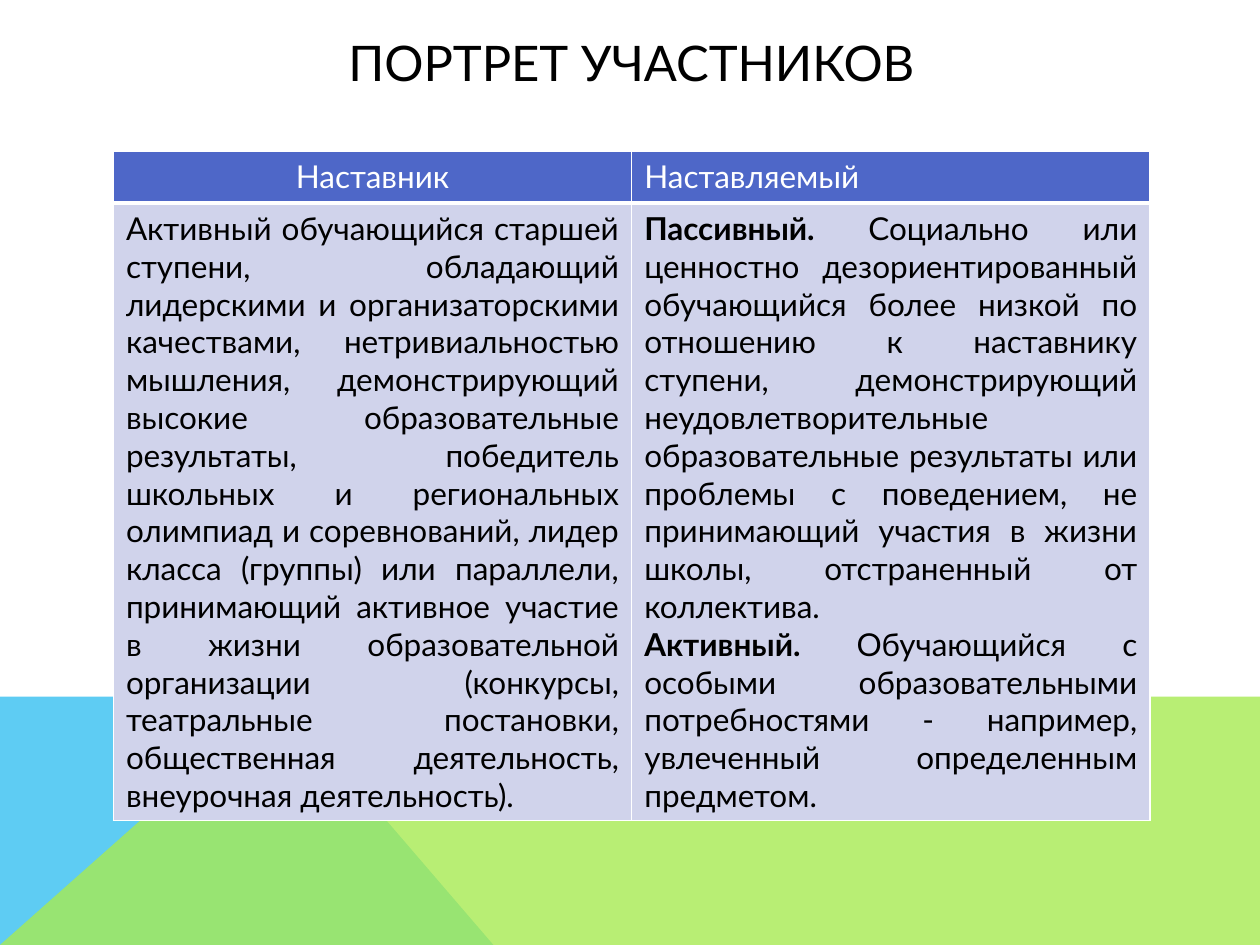
from lxml import etree
from pptx import Presentation
from pptx.dml.color import RGBColor
from pptx.enum.text import MSO_ANCHOR, PP_ALIGN
from pptx.oxml.ns import qn
from pptx.util import Pt

MID, TOP = MSO_ANCHOR.MIDDLE, MSO_ANCHOR.TOP
CENTER, JUST = PP_ALIGN.CENTER, PP_ALIGN.JUSTIFY
BLACK, WHITE, BLUE, PALE = "000000", "FFFFFF", "4E67C8", "D0D3EB"


def paint(fmt, color):
    if hasattr(fmt, "solid"):
        fmt.solid()
        fmt = fmt.fore_color
    fmt.rgb = RGBColor.from_string(color)


def write(para, align, runs, size, color):
    para.alignment = align
    for text, bold in runs:
        run = para.add_run()
        run.text = text
        for key, val in {"name": "Lato", "size": Pt(size), "bold": bold}.items():
            setattr(run.font, key, val)
        paint(run.font.color, color)


deck = Presentation()
deck.slide_width, deck.slide_height = Pt(720), Pt(540)
slide = deck.slides.add_slide(deck.slide_layouts[6])

# Coloured band at the foot; the green layer lets the blue show through
bands = [
    ("5ECCF3", 100, [(0, 540), (0, 397.5), (160.5, 397.5), (281.5, 540)]),
    ("A7EA52", 80, [(0, 540), (160.5, 397.5), (720, 397.9), (720, 540)]),
]
for color, alpha, points in bands:
    build = slide.shapes.build_freeform(*points[0], scale=Pt(1))
    build.add_line_segments(points[1:], close=True)
    band = build.convert_to_shape()
    band.shadow.inherit = False
    band.line.fill.background()
    paint(band.fill, color)
    if alpha < 100:
        tint = band.fill._xPr.find(".//" + qn("a:srgbClr"))
        etree.SubElement(tint, qn("a:alpha"), val=str(alpha * 1000))

# Title
title = slide.shapes.add_textbox(Pt(64.8), Pt(14), Pt(592), Pt(43.2))
frame = title.text_frame
frame.word_wrap = True
frame.vertical_anchor = MID
write(frame.paragraphs[0], CENTER, [("ПОРТРЕТ УЧАСТНИКОВ", False)], 28, BLACK)

# Table: each cell is a list of paragraphs, each paragraph a list of runs
mentor = (
    "Активный обучающийся старшей ступени, обладающий лидерскими и "
    "организаторскими качествами, нетривиальностью мышления, демонстрирующий "
    "высокие образовательные результаты, победитель школьных и региональных "
    "олимпиад и соревнований, лидер класса (группы) или параллели, принимающий "
    "активное участие в жизни образовательной организации (конкурсы, "
    "театральные постановки, общественная деятельность, внеурочная деятельность)."
)
passive = (
    "Социально или ценностно дезориентированный обучающийся более низкой по "
    "отношению к наставнику ступени, демонстрирующий неудовлетворительные "
    "образовательные результаты или проблемы с поведением, не принимающий "
    "участия в жизни школы, отстраненный от коллектива."
)
active = (
    "Обучающийся с особыми образовательными потребностями - например, "
    "увлеченный определенным предметом."
)
rows = [
    (29.5, BLUE, WHITE, 3, [
        (CENTER, [[("Наставник", False)]]),
        (JUST, [[("Наставляемый", False)]]),
    ]),
    (352.8, PALE, BLACK, 1, [
        (JUST, [[(mentor, False)]]),
        (JUST, [[("Пассивный. ", True), (passive, False)],
                [("Активный. ", True), (active, False)]]),
    ]),
]
table = slide.shapes.add_table(2, 2, Pt(64.8), Pt(86.6), Pt(592.4), Pt(382.3)).table
for col in table.columns:
    col.width = Pt(296.2)

for r, (height, fill, ink, rule, cells) in enumerate(rows):
    table.rows[r].height = Pt(height)
    for c, (align, paras) in enumerate(cells):
        cell = table.cell(r, c)
        cell.vertical_anchor = TOP
        frame = cell.text_frame
        for i, runs in enumerate(paras):
            para = frame.add_paragraph() if i else frame.paragraphs[0]
            write(para, align, runs, 18, ink)
        # Borders go before the fill in the cell properties
        props = cell._tc.get_or_add_tcPr()
        top = 3 if r else 1
        for side, width in {"L": 1, "R": 1, "T": top, "B": rule}.items():
            edge = etree.SubElement(props, qn("a:ln" + side), w=str(Pt(width)))
            solid = etree.SubElement(edge, qn("a:solidFill"))
            etree.SubElement(solid, qn("a:srgbClr"), val=WHITE)
        paint(cell.fill, fill)

deck.save("out.pptx")
